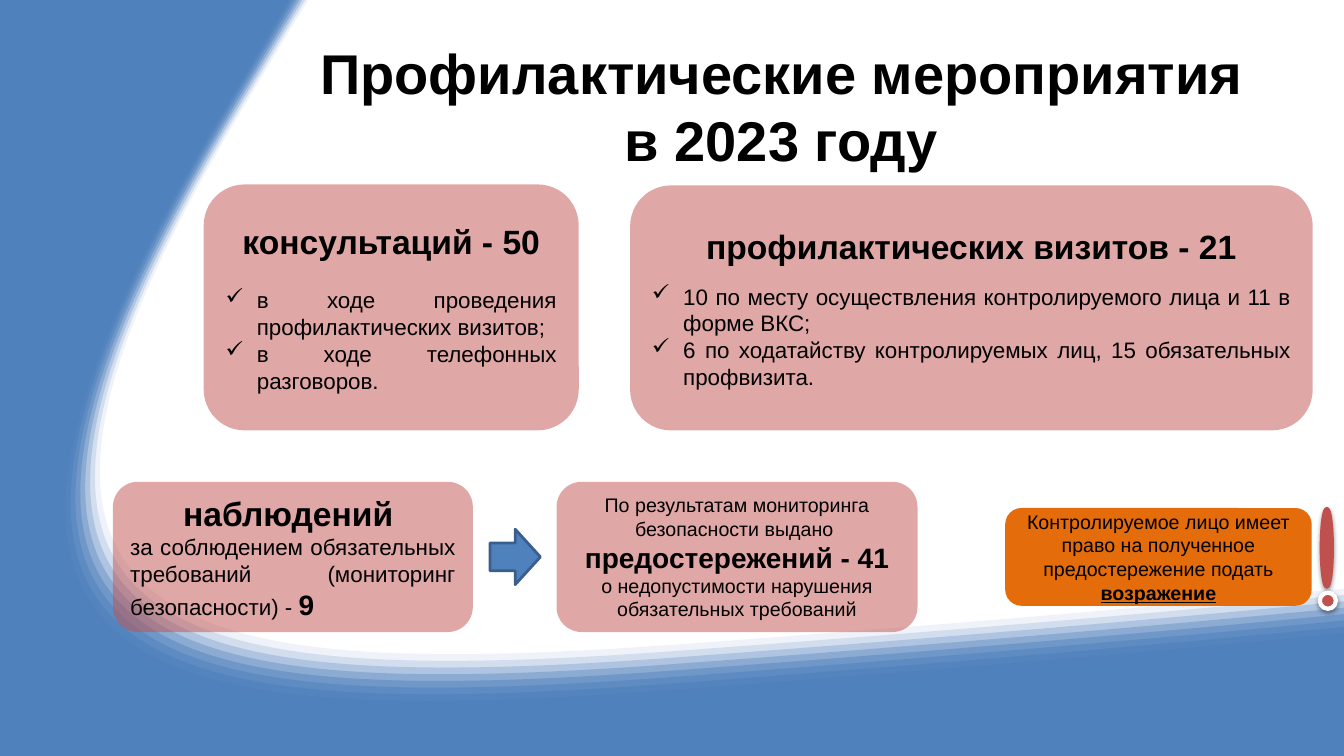
from dataclasses import dataclass

from lxml import etree
from pptx import Presentation
from pptx.dml.color import RGBColor
from pptx.enum.shapes import MSO_SHAPE
from pptx.enum.text import MSO_ANCHOR, PP_ALIGN
from pptx.oxml.ns import qn
from pptx.util import Inches, Pt

ROUND, OVAL, ARROW = MSO_SHAPE.ROUNDED_RECTANGLE, MSO_SHAPE.OVAL, MSO_SHAPE.RIGHT_ARROW
CENTER, JUSTIFY = PP_ALIGN.CENTER, PP_ALIGN.JUSTIFY
MIDDLE = MSO_ANCHOR.MIDDLE


@dataclass(frozen=True)
class Theme:
    font: str = "Arial"
    text: str = "000000"
    white: str = "FFFFFF"
    blue: str = "4F81BD"
    navy: str = "3A5F8C"
    red: str = "C0504D"
    orange: str = "E46C0A"
    title: int = 40
    head: int = 24
    strong: int = 20
    body: int = 16
    small: int = 14


THEME = Theme()
WIDE, HIGH = 13.33, 7.5
BANDS = 11

# Each edge is a start point and three cubic curves, from the top to the right side.
OUTER = [(2.65, 0), (2.65, 0), (2.4, 0.41), (1.96, 1.15),
         (-1.62, 7.12), (1.06, 7.55), (6.55, 7.14),
         (10.75, 6.82), (13.33, 6.56), (13.33, 6.56)]
FAINT = [(3.06, 0), (3.05, 0.01), (2.81, 0.4), (2.4, 1.09),
         (-0.73, 6.32), (1.61, 6.78), (6.9, 6.38),
         (10.85, 6.09), (13.31, 5.84), (13.33, 5.84)]
SOLID = [(2.77, 0), (2.71, 0.11), (2.48, 0.52), (2.11, 1.14),
         (-1.42, 7.03), (1.22, 7.45), (6.64, 7.04),
         (10.48, 6.75), (12.99, 6.51), (13.33, 6.47)]


def blend(a, b, t):
    return [(x + (u - x) * t, y + (v - y) * t) for (x, y), (u, v) in zip(a, b)]


def curves(edge):
    return [("a:cubicBezTo", edge[k:k + 3]) for k in range(1, len(edge), 3)]


def lines(points):
    return [("a:lnTo", [point]) for point in points]


def paint(shape, fill, alpha=100, line=None, width=0):
    shape.shadow.inherit = False
    shape.fill.solid()
    shape.fill.fore_color.rgb = RGBColor.from_string(fill)
    if alpha < 100:
        color = shape._element.spPr.find(qn("a:solidFill"))[0]
        etree.SubElement(color, qn("a:alpha"), val=str(alpha * 1000))
    if line:
        shape.line.color.rgb = RGBColor.from_string(line)
        shape.line.width = Pt(width)
    else:
        shape.line.fill.background()


def area(shapes, edge, rest, alpha=100):
    """Draw a slide-sized freeform bounded by a curved edge and further steps."""
    wide, high = Inches(WIDE), Inches(HIGH)
    pen = shapes.build_freeform(0, 0)
    pen.add_line_segments([(wide, 0), (wide, high), (0, high)])
    shape = pen.convert_to_shape()
    route = shape._element.spPr.find(".//" + qn("a:path"))
    for node in list(route):
        route.remove(node)
    for tag, points in [("a:moveTo", edge[:1])] + curves(edge) + rest:
        node = etree.SubElement(route, qn(tag))
        for x, y in points:
            etree.SubElement(node, qn("a:pt"), x=str(Inches(x)), y=str(Inches(y)))
    etree.SubElement(route, qn("a:close"))
    paint(shape, THEME.blue, alpha)


def swoosh(shapes):
    area(shapes, OUTER, lines([(WIDE, HIGH), (0, HIGH), (0, 0)]))
    back = OUTER[::-1]
    for n in range(BANDS):
        edge = blend(FAINT, SOLID, n / (BANDS - 1))
        area(shapes, edge, lines(back[:1]) + curves(back), round(100 * (n + 1) / BANDS))


def add(shapes, kind, box, fill, **look):
    shape = shapes.add_shape(kind, *map(Inches, box))
    paint(shape, fill, **look)
    return shape


def card(shapes, box, fill=THEME.red, alpha=50):
    shape = add(shapes, ROUND, box, fill, alpha=alpha)
    shape.text_frame.word_wrap = True
    shape.text_frame.vertical_anchor = MIDDLE
    return shape.text_frame


def write(frame, text, size=THEME.body, bold=False, under=False,
          align=CENTER, after=0, tick=False, join=False):
    """Add a paragraph, or with join a run in the last paragraph."""
    par = frame.paragraphs[-1]
    if par.runs and not join:
        par = frame.add_paragraph()
    if not join:
        par.alignment = align
        par.space_after = Pt(after)
    if tick:
        props = par._p.get_or_add_pPr()
        props.set("marL", str(Inches(0.31)))
        props.set("indent", str(Inches(-0.31)))
        etree.SubElement(props, qn("a:buChar"), char="✓")
    for n, part in enumerate(text.split("\n")):
        if n:
            par.add_line_break()
        run = par.add_run()
        run.text = part
        font = run.font
        font.name, font.size, font.bold = THEME.font, Pt(size), bold
        font.underline = under
        font.color.rgb = RGBColor.from_string(THEME.text)


def shade(shape):
    """Give a shape a soft shadow below it."""
    effects = shape._element.spPr.find(qn("a:effectLst"))
    drop = etree.SubElement(effects, qn("a:outerShdw"), blurRad=str(Pt(3.1)),
                            dist=str(Pt(1.6)), dir="5400000", rotWithShape="0")
    color = etree.SubElement(drop, qn("a:srgbClr"), val=THEME.text)
    etree.SubElement(color, qn("a:alpha"), val="38000")


def alert(shapes):
    """Draw the exclamation mark."""
    group = shapes.add_group_shape().shapes
    shade(add(group, OVAL, (13.11, 5.05, 0.1, 0.77), THEME.red, line=THEME.red, width=3))
    shade(add(group, OVAL, (13.09, 5.88, 0.16, 0.16), THEME.red, line=THEME.white, width=3))


def heading(shapes):
    frame = shapes.add_textbox(*map(Inches, (2.25, 0.25, 11, 1.59))).text_frame
    frame.word_wrap = True
    frame.vertical_anchor = MIDDLE
    write(frame, "Профилактические мероприятия\nв 2023 году", size=THEME.title, bold=True)


def tally(shapes, box, title, gap, items):
    frame = card(shapes, box)
    write(frame, title, size=THEME.head, bold=True, after=gap)
    for item in items:
        write(frame, item, align=JUSTIFY, tick=True)


def watch(shapes):
    frame = card(shapes, (1.12, 4.78, 3.57, 1.49))
    write(frame, "наблюдений ", size=THEME.head, bold=True)
    write(frame, "за соблюдением обязательных требований (мониторинг безопасности) - ",
          align=JUSTIFY)
    write(frame, "9", size=THEME.strong, bold=True, join=True)


def warning(shapes):
    frame = card(shapes, (5.52, 4.78, 3.58, 1.49))
    write(frame, "По результатам мониторинга безопасности выдано ", size=THEME.small)
    write(frame, "предостережений - 41", size=THEME.strong, bold=True)
    write(frame, "о недопустимости нарушения обязательных требований", size=THEME.small)


def appeal(shapes):
    frame = card(shapes, (9.97, 5.04, 3.04, 0.97), fill=THEME.orange, alpha=100)
    write(frame, "Контролируемое лицо имеет право на полученное предостережение подать ",
          size=THEME.small)
    write(frame, "возражение", size=THEME.small, bold=True, under=True, join=True)


def main():
    deck = Presentation()
    deck.slide_width, deck.slide_height = Inches(WIDE), Inches(HIGH)
    shapes = deck.slides.add_slide(deck.slide_layouts[6]).shapes
    swoosh(shapes)
    heading(shapes)
    tally(shapes, (2.02, 1.83, 3.72, 2.44), "консультаций - 50", 18,
          ["в ходе проведения профилактических визитов;",
           "в ходе телефонных разговоров."])
    tally(shapes, (6.25, 1.84, 6.77, 2.43), "профилактических визитов - 21", 12,
          ["10 по месту осуществления контролируемого лица и 11 в форме ВКС;",
           "6 по ходатайству контролируемых лиц, 15 обязательных профвизита."])
    watch(shapes)
    add(shapes, ARROW, (4.86, 5.25, 0.5, 0.55), THEME.blue, line=THEME.navy, width=2)
    warning(shapes)
    appeal(shapes)
    alert(shapes)
    deck.save("out.pptx")


if __name__ == "__main__":
    main()
